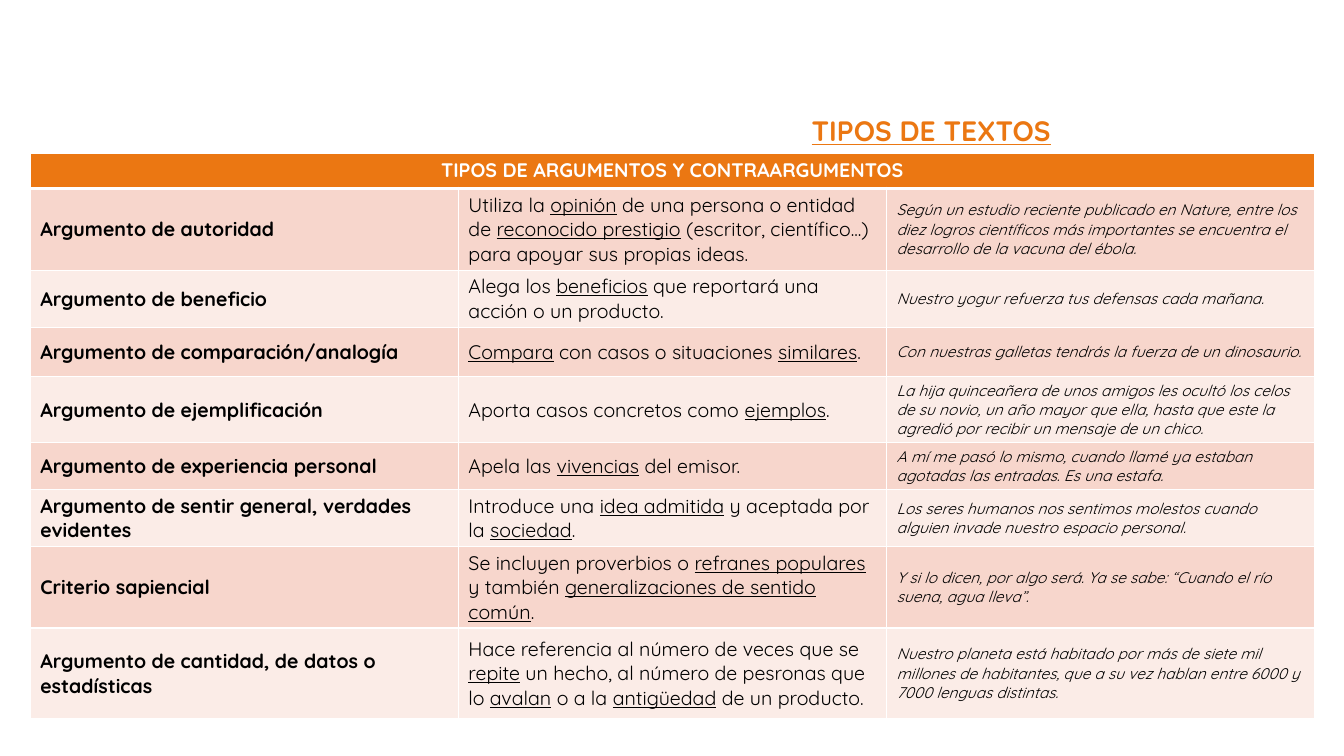
import pptx
import pptx.dml.color
import pptx.enum.text
import pptx.oxml
import pptx.oxml.ns
import pptx.util

TITLE = "TIPOS DE TEXTOS"
HEADING = "TIPOS DE ARGUMENTOS Y CONTRAARGUMENTOS"
ARGUMENTS = [
    ("Argumento de autoridad",
     "Utiliza la _opinión_ de una persona o entidad de _reconocido prestigio_ (escritor, científico...) para apoyar sus propias ideas.",
     "Según un estudio reciente publicado en Nature, entre los diez logros científicos más importantes se encuentra el desarrollo de la vacuna del ébola."),
    ("Argumento de beneficio",
     "Alega los _beneficios_ que reportará una acción o un producto.",
     "Nuestro yogur refuerza tus defensas cada mañana."),
    ("Argumento de comparación/analogía",
     "_Compara_ con casos o situaciones _similares_.",
     "Con nuestras galletas tendrás la fuerza de un dinosaurio."),
    ("Argumento de ejemplificación",
     "Aporta casos concretos como _ejemplos_.",
     "La hija quinceañera de unos amigos les ocultó los celos de su novio, un año mayor que ella, hasta que este la agredió por recibir un mensaje de un chico."),
    ("Argumento de experiencia personal",
     "Apela las _vivencias_ del emisor.",
     "A mí me pasó lo mismo, cuando llamé ya estaban agotadas las entradas. Es una estafa."),
    ("Argumento de sentir general, verdades evidentes",
     "Introduce una _idea admitida_ y aceptada por la _sociedad_.",
     "Los seres humanos nos sentimos molestos cuando alguien invade nuestro espacio personal."),
    ("Criterio sapiencial",
     "Se incluyen proverbios o _refranes populares_ y también _generalizaciones de sentido común_.",
     "Y si lo dicen, por algo será. Ya se sabe: “Cuando el río suena, agua lleva”."),
    ("Argumento de cantidad, de datos o estadísticas",
     "Hace referencia al número de veces que se _repite_ un hecho, al número de pesronas que lo _avalan_ o a la _antigüedad_ de un producto.",
     "Nuestro planeta está habitado por más de siete mil millones de habitantes, que a su vez hablan entre 6000 y 7000 lenguas distintas."),
]

COLORS = {"orange": "EB7712", "dark": "F7D6CC", "light": "FBECE7",
          "white": "FFFFFF", "black": "000000"}
FONT = "Quicksand"
SLIDE_SIZE = (13.33, 7.5)
TITLE_BOX = {"left": 7.95, "top": 1.08, "width": 4.95, "height": 0.44}
TABLE_LEFT, TABLE_TOP, TABLE_WIDTH = 0.3, 1.52, 12.74
ROW_HEIGHTS = [0.35, 0.69, 0.49, 0.49, 0.56, 0.41, 0.49, 0.69, 0.9]
CELL_MARGINS = {"margin_top": 0.04, "margin_bottom": 0.04}
TITLE_FORMAT = {"size": 20, "bold": True, "underline": True, "color": "orange"}
HEADING_FORMAT = {"size": 14, "bold": True, "color": "white"}
COLUMN_FORMATS = [
    {"size": 14, "bold": True, "color": "black"},
    {"size": 14, "bold": False, "color": "black"},
    {"size": 11, "bold": False, "italic": True, "color": "black"},
]


def rgb(name):
    return pptx.dml.color.RGBColor.from_string(COLORS[name])


def write(paragraph, text, values):
    for index, part in enumerate(text.split("_")):
        if not part:
            continue
        run = paragraph.add_run()
        run.text = part
        font = run.font
        font.name = FONT
        font.color.rgb = rgb(values["color"])
        font.size = pptx.util.Pt(values["size"])
        for key in ("bold", "italic", "underline"):
            setattr(font, key, values.get(key, False))
        if index % 2:
            font.underline = True


def style_cell(cell, fill, top, bottom):
    properties = cell._tc.get_or_add_tcPr()
    widths = {"lnL": 1, "lnR": 1, "lnT": top, "lnB": bottom}
    for index, (side, points) in enumerate(widths.items()):
        border = pptx.oxml.parse_xml(
            f'<a:{side} {pptx.oxml.ns.nsdecls("a")} w="{pptx.util.Pt(points)}">'
            f'<a:solidFill><a:srgbClr val="{COLORS["white"]}"/></a:solidFill></a:{side}>')
        properties.insert(index, border)
    cell.fill.solid()
    cell.fill.fore_color.rgb = rgb(fill)


def add_title(slide):
    title = slide.shapes.title
    for key, value in TITLE_BOX.items():
        setattr(title, key, pptx.util.Inches(value))
    frame = title.text_frame
    frame.word_wrap = True
    frame.auto_size = pptx.enum.text.MSO_AUTO_SIZE.NONE
    frame.vertical_anchor = pptx.enum.text.MSO_ANCHOR.TOP
    frame.paragraphs[0].alignment = pptx.enum.text.PP_ALIGN.LEFT
    write(frame.paragraphs[0], TITLE, TITLE_FORMAT)


def add_arguments(slide):
    columns = len(COLUMN_FORMATS)
    table = slide.shapes.add_table(
        len(ROW_HEIGHTS), columns,
        pptx.util.Inches(TABLE_LEFT), pptx.util.Inches(TABLE_TOP),
        pptx.util.Inches(TABLE_WIDTH), pptx.util.Inches(sum(ROW_HEIGHTS))).table
    for row, height in zip(table.rows, ROW_HEIGHTS):
        row.height = pptx.util.Inches(height)
    for column in range(columns):
        style_cell(table.cell(0, column), "orange", 1, 3)
    heading = table.cell(0, 0)
    heading.merge(table.cell(0, columns - 1))
    paragraph = heading.text_frame.paragraphs[0]
    paragraph.alignment = pptx.enum.text.PP_ALIGN.CENTER
    write(paragraph, HEADING, HEADING_FORMAT)
    for row, argument in enumerate(ARGUMENTS, 1):
        for column, (text, values) in enumerate(zip(argument, COLUMN_FORMATS)):
            cell = table.cell(row, column)
            style_cell(cell, "dark" if row % 2 else "light", 3 if row == 1 else 1, 1)
            cell.vertical_anchor = pptx.enum.text.MSO_ANCHOR.MIDDLE
            for key, value in CELL_MARGINS.items():
                setattr(cell, key, pptx.util.Inches(value))
            write(cell.text_frame.paragraphs[0], text, values)


def main():
    presentation = pptx.Presentation()
    presentation.slide_width, presentation.slide_height = map(pptx.util.Inches, SLIDE_SIZE)
    slide = presentation.slides.add_slide(presentation.slide_layouts[5])
    add_title(slide)
    add_arguments(slide)
    presentation.save("out.pptx")


if __name__ == "__main__":
    main()
